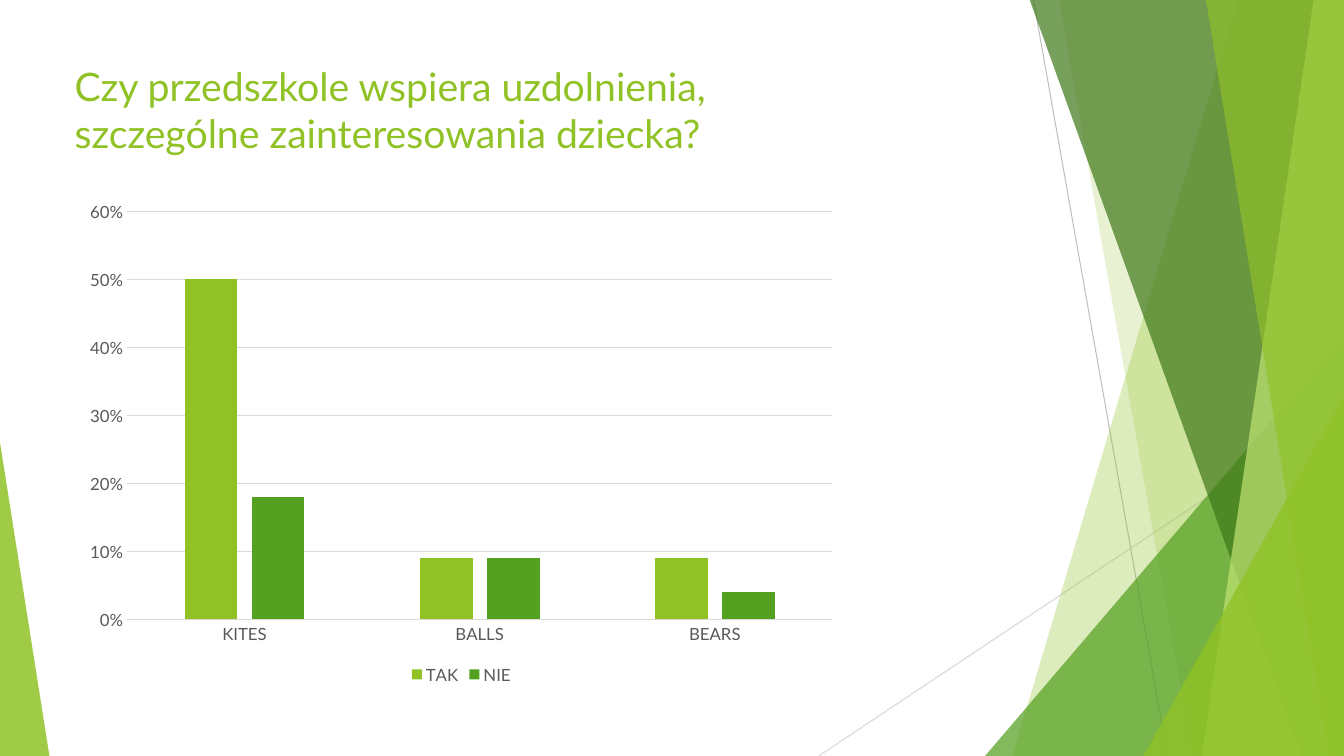
from dataclasses import dataclass

import pptx
import pptx.chart.data
import pptx.dml.color
import pptx.enum.chart
import pptx.enum.shapes
import pptx.enum.text
import pptx.oxml.ns
import pptx.oxml.xmlchemy
import pptx.util
from pptx.util import Inches

HUES = {
    "lime": "90C226",
    "green": "54A021",
    "dark": "3F7819",
    "pale": "C0E474",
    "gray": "BFBFBF",
    "light": "D9D9D9",
    "text": "595959",
}
FONT = "Lato"
WIDE, HIGH = 13.33, 7.5
TOP = -0.01


@dataclass
class Ray:
    start: tuple[float, float]
    end: tuple[float, float]
    hue: str


@dataclass
class Shard:
    top: float
    base: float
    hue: str
    alpha: int


@dataclass
class Peak:
    left: float
    top: float
    width: float
    apex: float
    hue: str
    alpha: int


@dataclass
class Bar:
    name: str
    vals: tuple[float, ...]
    hue: str


RAYS = [
    Ray((10.25, 0), (11.58, HIGH), "gray"),
    Ray((WIDE, 4.03), (8.12, HIGH), "light"),
]
PARTS = [
    Shard(12.28, 10.04, "lime", 30),
    Shard(10.5, 11.83, "lime", 20),
    Peak(9.77, 3.33, 3.56, 1, "green", 72),
    Shard(10.21, 12.91, "dark", 70),
    Shard(13.03, 11.92, "pale", 70),
    Shard(11.96, 13.18, "lime", 65),
    Peak(11.34, 3.93, 1.99, 1, "lime", 80),
    Peak(0, 4.39, 0.49, 0, "lime", 85),
]
GROUPS = ["KITES", "BALLS", "BEARS"]
BARS = [
    Bar("TAK", (0.5, 0.09, 0.09), "lime"),
    Bar("NIE", (0.18, 0.09, 0.04), "green"),
]


def shade(hue: str) -> pptx.dml.color.RGBColor:
    return pptx.dml.color.RGBColor.from_string(HUES[hue])


def style(font, size: float, hue: str) -> None:
    font.name = FONT
    font.size = pptx.util.Pt(size)
    font.color.rgb = shade(hue)


def stroke(line, hue: str) -> None:
    line.color.rgb = shade(hue)
    line.width = pptx.util.Pt(0.75)


def paint(shape, hue: str, alpha: int) -> None:
    shape.shadow.inherit = False
    shape.line.fill.background()
    shape.fill.solid()
    shape.fill.fore_color.rgb = shade(hue)
    tint = shape._element.spPr.find(".//" + pptx.oxml.ns.qn("a:srgbClr"))
    veil = pptx.oxml.xmlchemy.OxmlElement("a:alpha")
    veil.set("val", str(alpha * 1000))
    tint.append(veil)


def draw_ray(slide, ray: Ray) -> None:
    ends = [Inches(n) for n in ray.start + ray.end]
    line = slide.shapes.add_connector(pptx.enum.shapes.MSO_CONNECTOR.STRAIGHT, *ends)
    stroke(line.line, ray.hue)
    line._element.spPr.append(pptx.oxml.xmlchemy.OxmlElement("a:effectLst"))


def draw_shard(slide, shard: Shard) -> None:
    spots = [(shard.top, TOP), (WIDE, TOP), (WIDE, HIGH), (shard.base, HIGH)]
    first, *rest = [(Inches(x), Inches(y)) for x, y in spots]
    pen = slide.shapes.build_freeform(*first)
    pen.add_line_segments(rest, close=True)
    paint(pen.convert_to_shape(), shard.hue, shard.alpha)


def draw_peak(slide, peak: Peak) -> None:
    shape = slide.shapes.add_shape(
        pptx.enum.shapes.MSO_SHAPE.ISOSCELES_TRIANGLE,
        Inches(peak.left), Inches(peak.top),
        Inches(peak.width), Inches(HIGH - peak.top),
    )
    shape.adjustments[0] = peak.apex
    paint(shape, peak.hue, peak.alpha)


def write(slide, text: str, *, box: tuple[float, ...], size: float, hue: str) -> None:
    frame = slide.shapes.add_textbox(*[Inches(n) for n in box]).text_frame
    frame.word_wrap = True
    frame.vertical_anchor = pptx.enum.text.MSO_ANCHOR.MIDDLE
    frame.margin_left = frame.margin_right = 0
    frame.margin_top = frame.margin_bottom = 0
    run = frame.paragraphs[0].add_run()
    run.text = text
    style(run.font, size, hue)


def draw_chart(slide, box: tuple[float, ...]) -> None:
    data = pptx.chart.data.CategoryChartData(number_format="0.00%")
    data.categories = GROUPS
    for bar in BARS:
        data.add_series(bar.name, bar.vals)
    chart = slide.shapes.add_chart(
        pptx.enum.chart.XL_CHART_TYPE.COLUMN_CLUSTERED,
        *[Inches(n) for n in box], data,
    ).chart
    style(chart.font, 12, "text")
    chart.has_title = False
    chart.has_legend = True
    chart.legend.position = pptx.enum.chart.XL_LEGEND_POSITION.BOTTOM
    chart.legend.include_in_layout = False
    style(chart.legend.font, 12, "text")

    plot = chart.plots[0]
    plot.vary_by_categories = False
    plot.gap_width = 219
    plot.overlap = -27
    for row, bar in zip(plot.series, BARS):
        row.format.fill.solid()
        row.format.fill.fore_color.rgb = shade(bar.hue)

    for axis in (chart.category_axis, chart.value_axis):
        axis.major_tick_mark = pptx.enum.chart.XL_TICK_MARK.NONE
        axis.minor_tick_mark = pptx.enum.chart.XL_TICK_MARK.NONE
        style(axis.tick_labels.font, 12, "text")
    stroke(chart.category_axis.format.line, "light")
    scale = chart.value_axis
    scale.minimum_scale, scale.maximum_scale, scale.major_unit = 0, 0.6, 0.1
    scale.tick_labels.number_format = "0%"
    scale.tick_labels.number_format_is_linked = False
    scale.format.line.fill.background()
    stroke(scale.major_gridlines.format.line, "light")


def main() -> None:
    deck = pptx.Presentation()
    deck.slide_width, deck.slide_height = Inches(WIDE), Inches(HIGH)
    slide = deck.slides.add_slide(deck.slide_layouts[6])
    for ray in RAYS:
        draw_ray(slide, ray)
    for part in PARTS:
        if isinstance(part, Shard):
            draw_shard(slide, part)
        else:
            draw_peak(slide, part)
    write(
        slide,
        "Czy przedszkole wspiera uzdolnienia, szczególne zainteresowania dziecka?",
        box=(0.74, 0.67, 6.8, 0.82), size=28, hue="lime",
    )
    draw_chart(slide, (0.74, 1.9, 7.67, 4.93))
    deck.save("out.pptx")


if __name__ == "__main__":
    main()
